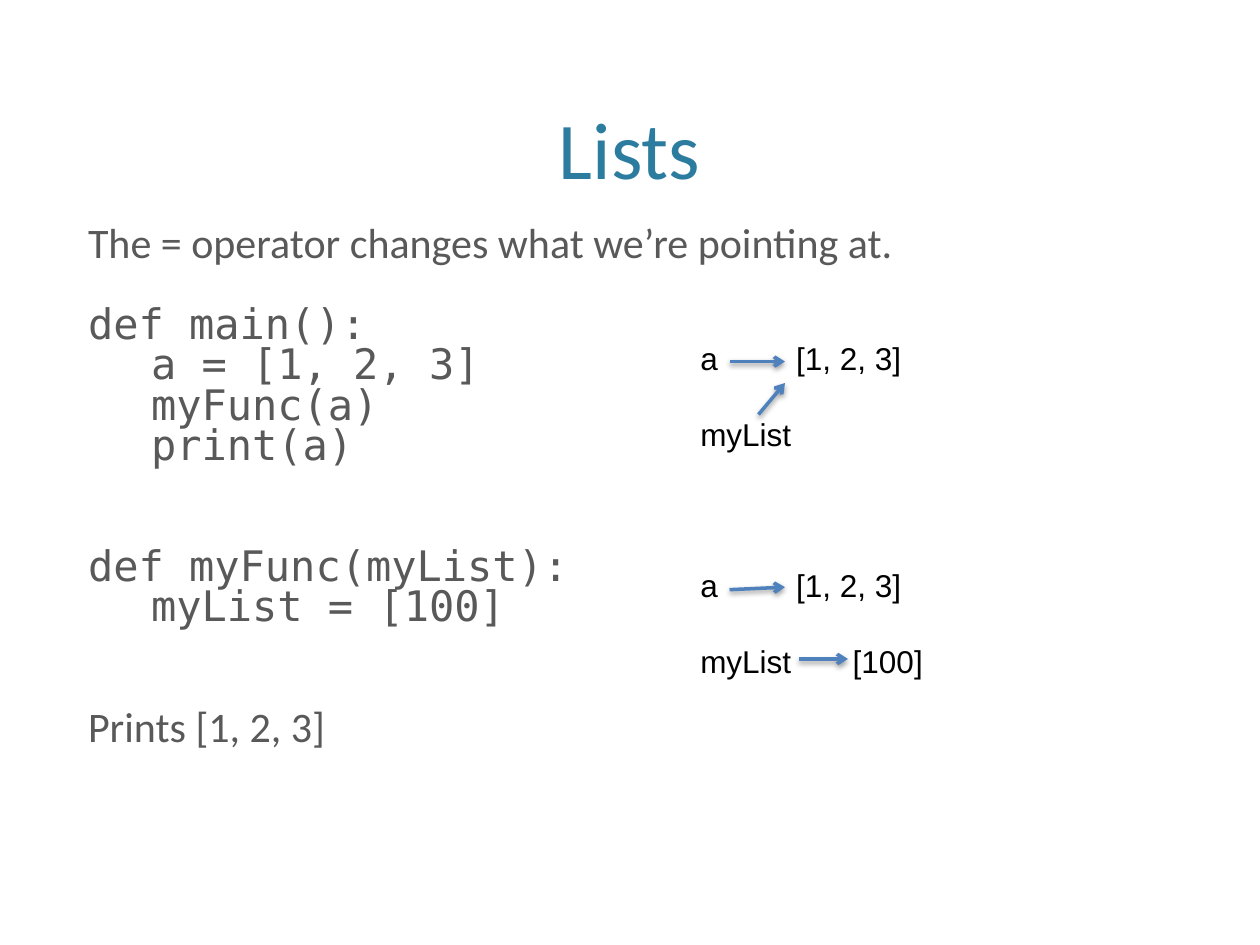
from dataclasses import dataclass
import pptx
import pptx.dml.color
import pptx.enum.shapes
import pptx.enum.text
import pptx.oxml
import pptx.oxml.ns
import pptx.util

RGBColor = pptx.dml.color.RGBColor
TEAL = RGBColor(0x2C, 0x7C, 0x9F)
GRAY = RGBColor(0x59, 0x59, 0x59)
BLACK = RGBColor(0, 0, 0)
BLUE = RGBColor(0x4F, 0x81, 0xBD)
SANS = "Calibri"
MONO = "DejaVu Sans Mono"
LABEL = "Arial"
COLS, ROWS = 100, 75
WIDE, HIGH = pptx.util.Inches(10), pptx.util.Inches(7.5)
SPACE = pptx.oxml.ns.nsdecls("a")
SHADOW = (
    f'<a:effectLst {SPACE}><a:outerShdw blurRad="39370" dist="20320" '
    'dir="5400000" rotWithShape="0"><a:srgbClr val="000000">'
    '<a:alpha val="38000"/></a:srgbClr></a:outerShdw></a:effectLst>'
)


@dataclass
class Line:
    text: str
    font: str
    gap: float = 0
    tab: float = 0


@dataclass
class Block:
    left: float
    top: float
    width: float
    height: float
    size: float
    color: RGBColor
    lines: list[Line]
    pitch: float = 1.0


@dataclass
class Arrow:
    x1: float
    y1: float
    x2: float
    y2: float


def col(n: float) -> int:
    return round(WIDE * n / COLS)


def row(n: float) -> int:
    return round(HIGH * n / ROWS)


def add_block(slide, block: Block):
    box = slide.shapes.add_textbox(
        col(block.left), row(block.top), col(block.width), row(block.height)
    )
    frame = box.text_frame
    frame.word_wrap = True
    frame.text = "\n".join(line.text for line in block.lines)
    for para, line in zip(frame.paragraphs, block.lines):
        if line.tab:
            para._p.get_or_add_pPr().append(pptx.oxml.parse_xml(
                f'<a:tabLst {SPACE}><a:tab pos="{col(line.tab)}" algn="l"/></a:tabLst>'
            ))
        para.line_spacing = block.pitch
        if line.gap:
            para.space_before = pptx.util.Pt(line.gap)
        for run in para.runs:
            run.font.name = line.font
            run.font.size = pptx.util.Pt(block.size)
            run.font.color.rgb = block.color
    return frame


def add_arrow(slide, arrow: Arrow) -> None:
    link = slide.shapes.add_connector(
        pptx.enum.shapes.MSO_CONNECTOR.STRAIGHT,
        col(arrow.x1), row(arrow.y1), col(arrow.x2), row(arrow.y2),
    )
    link.line.color.rgb = BLUE
    link.line.width = pptx.util.Pt(2)
    link.line._get_or_add_ln().append(
        pptx.oxml.parse_xml(f'<a:tailEnd {SPACE} type="arrow"/>')
    )
    link._element.spPr.append(pptx.oxml.parse_xml(SHADOW))


TITLE = Block(6, 5.6, 87.9, 10.4, 46, TEAL, [Line("Lists", SANS)])
BODY = Block(6, 17.5, 87.9, 47.5, 24, GRAY, [
    Line("The = operator changes what we’re pointing at.", SANS),
    Line("def main():", MONO, gap=23),
    Line("\ta = [1, 2, 3]", MONO, tab=5),
    Line("\tmyFunc(a)", MONO, tab=5),
    Line("\tprint(a)", MONO, tab=5),
    Line("def myFunc(myList):", MONO, gap=46),
    Line("\tmyList = [100]", MONO, tab=5),
    Line("Prints [1, 2, 3]", SANS, gap=46),
], pitch=0.8)
STATES = [
    (26.4, Line("myList", LABEL, gap=22)),
    (44.4, Line("myList\t[100]", LABEL, gap=22, tab=12.1)),
]
ARROWS = [
    Arrow(60.2, 32.9, 62.3, 30.4),
    Arrow(57.9, 28.7, 62.3, 28.7),
    Arrow(57.9, 46.8, 62.3, 46.6),
    Arrow(63.4, 52.3, 67.3, 52.3),
]


def main() -> None:
    deck = pptx.Presentation()
    deck.slide_width, deck.slide_height = WIDE, HIGH
    slide = deck.slides.add_slide(deck.slide_layouts[6])
    title = add_block(slide, TITLE)
    title.vertical_anchor = pptx.enum.text.MSO_ANCHOR.BOTTOM
    title.paragraphs[0].alignment = pptx.enum.text.PP_ALIGN.CENTER
    add_block(slide, BODY)
    for top, last in STATES:
        first = Line("a\t[1, 2, 3]", LABEL, tab=7.6)
        add_block(slide, Block(54.6, top, 30.4, 10.1, 18, BLACK, [first, last]))
    for arrow in ARROWS:
        add_arrow(slide, arrow)
    deck.save("out.pptx")


if __name__ == "__main__":
    main()
